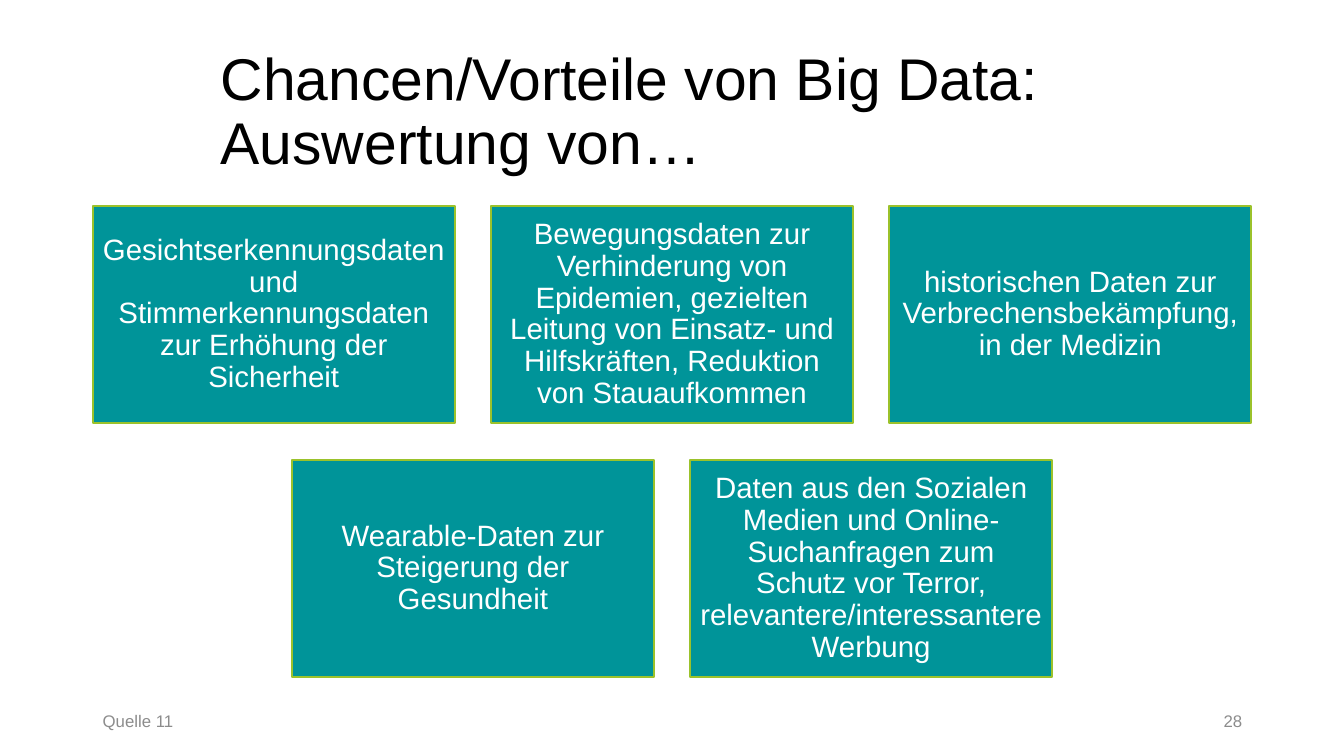
from dataclasses import dataclass

from pptx import Presentation
from pptx.dml.color import RGBColor
from pptx.enum.shapes import MSO_SHAPE
from pptx.enum.text import MSO_ANCHOR, PP_ALIGN
from pptx.util import Inches, Pt

RECT = MSO_SHAPE.RECTANGLE
TOP, MIDDLE = MSO_ANCHOR.TOP, MSO_ANCHOR.MIDDLE
LEFT, CENTER, RIGHT = PP_ALIGN.LEFT, PP_ALIGN.CENTER, PP_ALIGN.RIGHT

CARD_ROWS = [
    [
        "Gesichtserkennungsdaten und Stimmerkennungsdaten zur Erhöhung der Sicherheit",
        "Bewegungsdaten zur Verhinderung von Epidemien, gezielten Leitung von "
        "Einsatz- und Hilfskräften, Reduktion von Stauaufkommen",
        "historischen Daten zur Verbrechensbekämpfung, in der Medizin",
    ],
    [
        "Wearable-Daten zur Steigerung der Gesundheit",
        "Daten aus den Sozialen Medien und Online-Suchanfragen zum Schutz vor "
        "Terror, relevantere/interessantere Werbung",
    ],
]


@dataclass(frozen=True)
class Theme:
    font: str = "Arial"
    ink: str = "000000"
    card_fill: str = "009499"
    card_line: str = "9BC22B"
    card_text: str = "FFFFFF"
    muted: str = "8C8C8C"
    title_size: float = 42
    card_size: float = 21
    footer_size: float = 12
    card_border: float = 1.5


@dataclass(frozen=True)
class Grid:
    left: float = 0.92
    top: float = 2.04
    card_width: float = 3.59
    card_height: float = 2.16
    gap: float = 0.36
    columns: int = 3

    def cell(self, row, column):
        x = self.left + column * (self.card_width + self.gap)
        y = self.top + row * (self.card_height + self.gap)
        return x, y, self.card_width, self.card_height


class SlideBuilder:
    """Draws styled elements on the current slide."""

    def __init__(self, slide, theme, grid):
        self.slide, self.theme, self.grid = slide, theme, grid

    def set_text(self, sp, text, size, color, align, anchor, spacing):
        tf = sp.text_frame
        tf.word_wrap = True
        tf.vertical_anchor = anchor
        p = tf.paragraphs[0]
        p.text = text
        p.alignment = align
        p.line_spacing = spacing
        p.font.name = self.theme.font
        p.font.size = Pt(size)
        p.font.color.rgb = RGBColor.from_string(color)
        return tf

    def label(self, box, text, size, color, align=LEFT, anchor=MIDDLE, spacing=1.0):
        sp = self.slide.shapes.add_textbox(*map(Inches, box))
        self.set_text(sp, text, size, color, align, anchor, spacing)

    def title(self, box, text):
        self.label(box, text, self.theme.title_size, self.theme.ink, spacing=0.9)

    def footer(self, box, text, align=LEFT, anchor=MIDDLE):
        self.label(box, text, self.theme.footer_size, self.theme.muted, align, anchor)

    def card(self, row, column, text):
        t = self.theme
        sp = self.slide.shapes.add_shape(RECT, *map(Inches, self.grid.cell(row, column)))
        sp.shadow.inherit = False
        sp.fill.solid()
        sp.fill.fore_color.rgb = RGBColor.from_string(t.card_fill)
        sp.line.color.rgb = RGBColor.from_string(t.card_line)
        sp.line.width = Pt(t.card_border)
        tf = self.set_text(sp, text, t.card_size, t.card_text, CENTER, MIDDLE, 0.9)
        tf.margin_left = tf.margin_right = Inches(0.09)
        tf.margin_top = tf.margin_bottom = Inches(0.09)

    def cards(self, rows):
        for row, texts in enumerate(rows):
            offset = (self.grid.columns - len(texts)) / 2
            for column, text in enumerate(texts):
                self.card(row, column + offset, text)


def main():
    prs = Presentation()
    prs.slide_width, prs.slide_height = Inches(13.33), Inches(7.5)
    s = prs.slides.add_slide(prs.slide_layouts[6])
    builder = SlideBuilder(s, Theme(), Grid())
    builder.title((2.09, 0.4, 10.32, 1.45), "Chancen/Vorteile von Big Data: Auswertung von…")
    builder.cards(CARD_ROWS)
    builder.footer((0.92, 7, 2.53, 0.3), "Quelle 11", anchor=TOP)
    builder.footer((9.42, 6.95, 3, 0.4), "28", align=RIGHT)
    prs.save("out.pptx")


if __name__ == "__main__":
    main()
